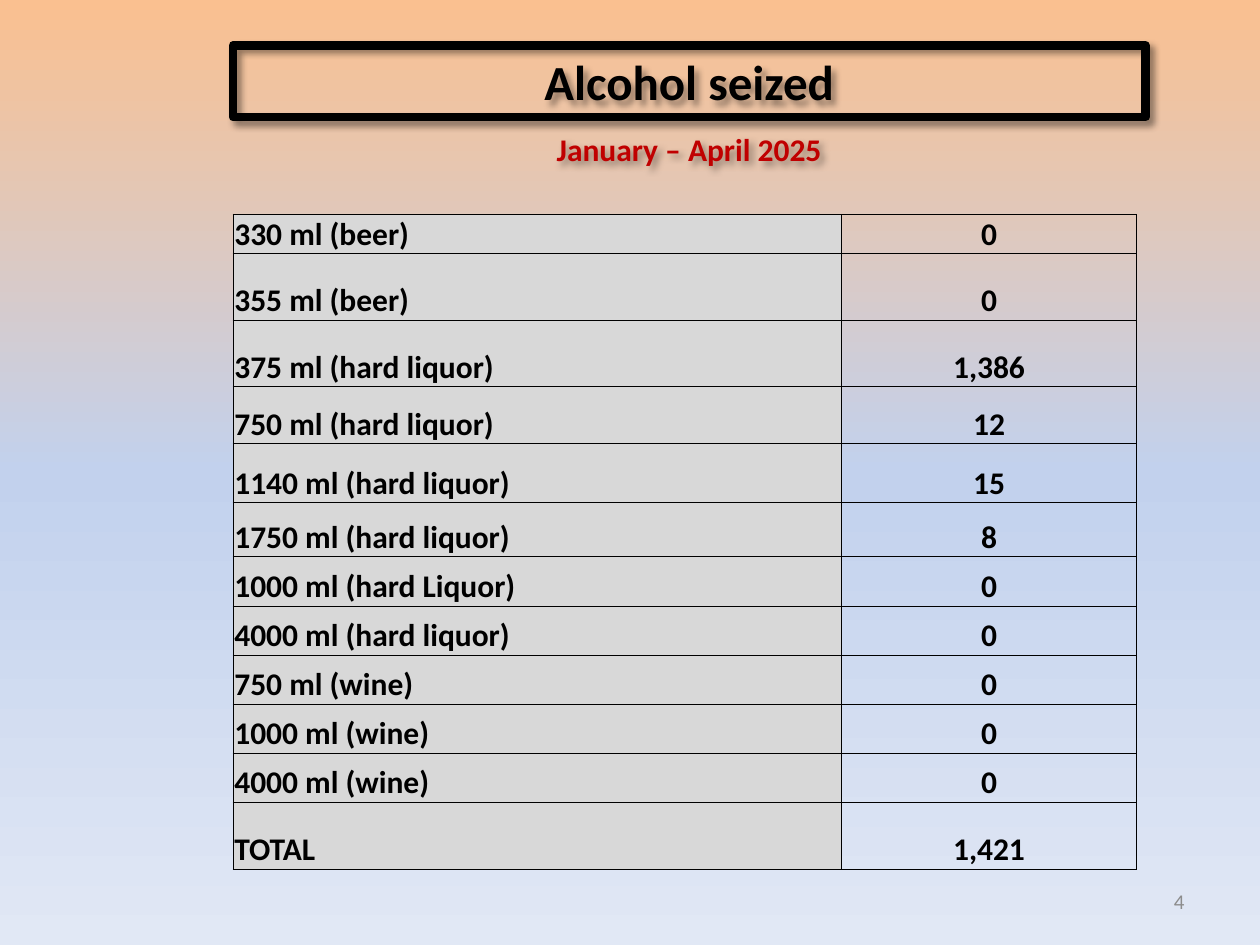
from copy import deepcopy

from lxml import etree
from pptx import Presentation, util as u
from pptx.dml.color import RGBColor
from pptx.enum import text
from pptx.oxml import parse_xml
from pptx.oxml.ns import nsdecls, qn

BLACK = RGBColor(0x00, 0x00, 0x00)
RED = RGBColor(0xC0, 0x00, 0x00)
GREY = RGBColor(0x8C, 0x8C, 0x8C)
LABEL_FILL = RGBColor(0xD8, 0xD8, 0xD8)
SKY = [(0, RGBColor(0xFA, 0xC0, 0x90)),
       (0.5, RGBColor(0xC2, 0xD1, 0xED)),
       (1, RGBColor(0xE1, 0xE8, 0xF5))]

WIDTH, HEIGHT = u.Inches(10), u.Inches(7.5)
LEFT = 1.85  # shared left edge of heading and table, in inches

# Label, amount, row height in inches
SEIZURES = [
    ("330 ml (beer)", "0", 0.31),
    ("355 ml (beer)", "0", 0.53),
    ("375 ml (hard liquor)", "1,386", 0.53),
    ("750 ml (hard liquor)", "12", 0.45),
    ("1140 ml (hard liquor)", "15", 0.47),
    ("1750 ml (hard liquor)", "8", 0.43),
    ("1000 ml (hard Liquor)", "0", 0.39),
    ("4000 ml (hard liquor)", "0", 0.39),
    ("750 ml (wine)", "0", 0.39),
    ("1000 ml (wine)", "0", 0.39),
    ("4000 ml (wine)", "0", 0.39),
    ("TOTAL", "1,421", 0.53),
]


def inches(*lengths):
    return [u.Inches(length) for length in lengths]


def write(frame, words, size, color, align, bold=True):
    frame.text = words
    para = frame.paragraphs[0]
    para.alignment = align
    font = para.font
    font.name, font.size, font.bold = "Calibri", u.Pt(size), bold
    font.color.rgb = color


def add_soft_shadow(shape):
    shape.element.spPr.append(parse_xml(
        f'<a:effectLst {nsdecls("a")}>'
        f'<a:outerShdw blurRad="{u.Pt(4)}" dist="{u.Pt(3)}" dir="2700000" algn="tl">'
        '<a:srgbClr val="000000"><a:alpha val="40000"/></a:srgbClr>'
        '</a:outerShdw></a:effectLst>'))


def paint_background(page):
    fill = page.background.fill
    fill.gradient()
    fill.gradient_angle = 270
    stop_list = page.element.find(".//" + qn("a:gsLst"))
    stop_list.append(deepcopy(stop_list[0]))
    for stop, (position, color) in zip(fill.gradient_stops, SKY):
        stop.position = position
        stop.color.rgb = color


def add_heading(page, left, top, width):
    # Framed title, kept at its set height
    title = page.shapes.title
    title.left, title.top, title.width, title.height = inches(left, top, width, 0.57)
    title.fill.background()
    title.line.color.rgb = BLACK
    title.line.width = u.Pt(5)
    add_soft_shadow(title)
    frame = title.text_frame
    frame.auto_size = text.MSO_AUTO_SIZE.NONE
    frame.vertical_anchor = text.MSO_ANCHOR.TOP
    write(frame, "Alcohol seized", 28, BLACK, text.PP_ALIGN.CENTER)

    # Reporting period; without a fill, the shadow falls from the letters
    period = page.shapes.add_textbox(*inches(left, top + 0.62, width, 0.4))
    period.text_frame.word_wrap = True
    add_soft_shadow(period)
    write(period.text_frame, "January – April 2025", 18, RED, text.PP_ALIGN.CENTER)


def outline(cell):
    props = cell._tc.get_or_add_tcPr()
    for place, side in enumerate(("a:lnL", "a:lnR", "a:lnT", "a:lnB")):
        line = etree.Element(qn(side), w=str(u.Pt(0.5)))
        fill = etree.SubElement(line, qn("a:solidFill"))
        etree.SubElement(fill, qn("a:srgbClr"), val=str(BLACK))
        props.insert(place, line)


def add_seizure_table(page, left, top, widths):
    heights = [height for _, _, height in SEIZURES]
    box = inches(left, top, sum(widths), sum(heights))
    table = page.shapes.add_table(len(SEIZURES), len(widths), *box).table
    table.first_row = table.horz_banding = False
    for column, width in zip(table.columns, widths):
        column.width = u.Inches(width)
    for row, (label, amount, height) in zip(table.rows, SEIZURES):
        row.height = u.Inches(height)
        label_cell, amount_cell = row.cells
        for cell, words, align in ((label_cell, label, text.PP_ALIGN.LEFT),
                                   (amount_cell, amount, text.PP_ALIGN.CENTER)):
            cell.margin_left = cell.margin_right = cell.margin_top = u.Inches(0.01)
            cell.margin_bottom = 0
            cell.vertical_anchor = text.MSO_ANCHOR.BOTTOM
            write(cell.text_frame, words, 18, BLACK, align)
            outline(cell)
        label_cell.fill.solid()
        label_cell.fill.fore_color.rgb = LABEL_FILL
        amount_cell.fill.background()


def add_page_number(page, left, top, width, height):
    box = page.shapes.add_textbox(*inches(left, top, width, height))
    box.text_frame.word_wrap = True
    box.text_frame.vertical_anchor = text.MSO_ANCHOR.MIDDLE
    write(box.text_frame, "4", 12, GREY, text.PP_ALIGN.RIGHT, bold=False)


def main():
    deck = Presentation()
    deck.slide_width, deck.slide_height = WIDTH, HEIGHT
    page = deck.slides.add_slide(deck.slide_layouts.get_by_name("Title Only"))
    paint_background(page)
    add_heading(page, LEFT, 0.36, 7.24)
    add_seizure_table(page, LEFT, 1.7, (4.83, 2.34))
    add_page_number(page, 7.17, 6.95, 2.33, 0.4)
    deck.save("out.pptx")


if __name__ == "__main__":
    main()
